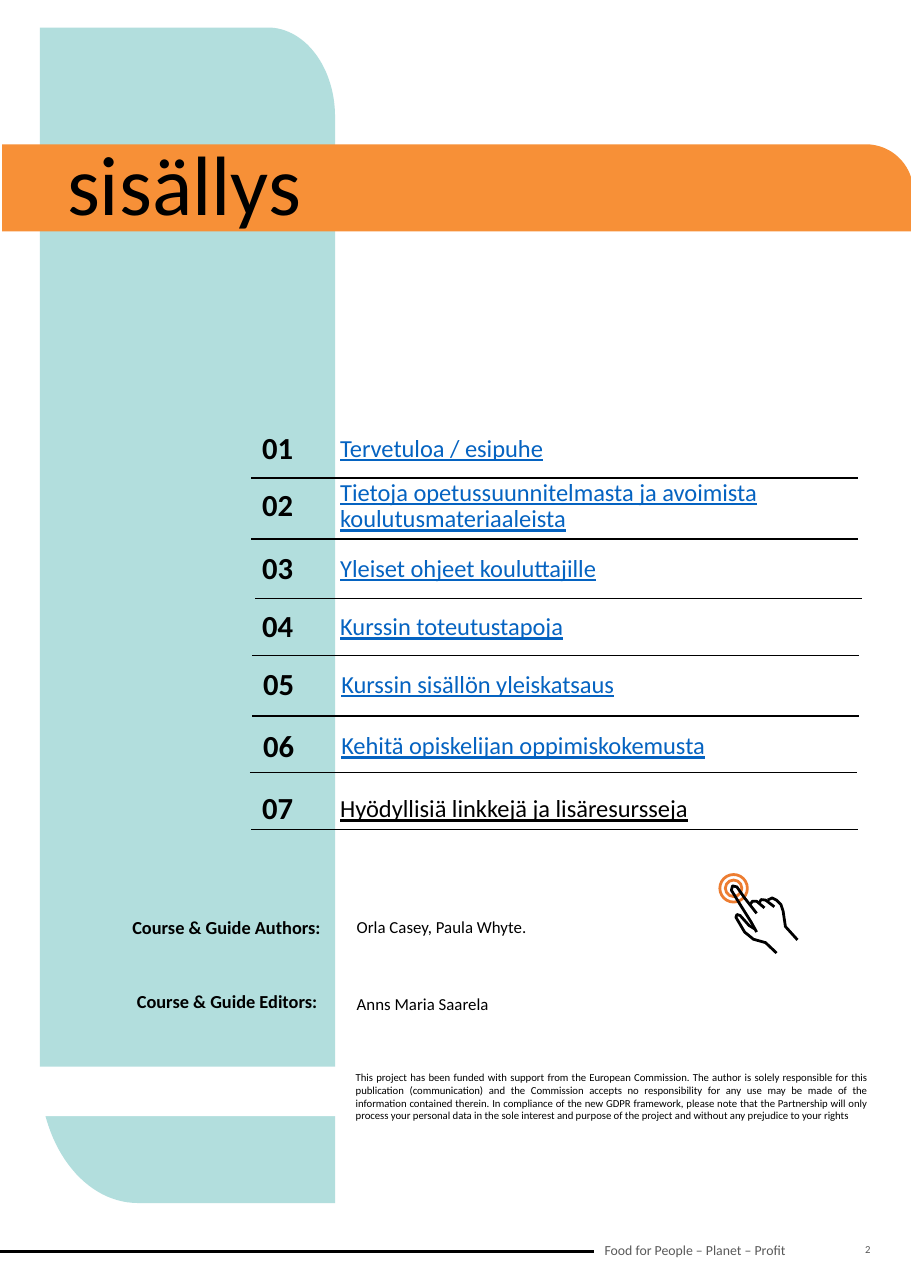
"""Build the contents page of a Finnish course guide."""
import dataclasses
import math
import typing

import lxml.etree
import pptx
import pptx.dml.color
import pptx.enum.shapes
import pptx.enum.text
import pptx.oxml.ns
import pptx.shapes.base
import pptx.slide
import pptx.util

Pt = pptx.util.Pt
RGBColor = pptx.dml.color.RGBColor
ALIGN = pptx.enum.text.PP_ALIGN
ANCHOR = pptx.enum.text.MSO_ANCHOR
SHAPE = pptx.enum.shapes.MSO_SHAPE

BLACK = RGBColor(0x00, 0x00, 0x00)
WHITE = RGBColor(0xFF, 0xFF, 0xFF)
GREY = RGBColor(0x59, 0x59, 0x59)
TEAL = RGBColor(0xB2, 0xDE, 0xDD)
ORANGE = RGBColor(0xF7, 0x90, 0x37)
RING_ORANGE = RGBColor(0xED, 0x7D, 0x31)
LINK_BLUE = RGBColor(0x05, 0x63, 0xC1)

Point = tuple[float, float]
Box = tuple[float, float, float, float]
Format = dict[str, typing.Any]

CONTENTS_SPACING: Format = {"line_spacing": 0.9, "space_before": Pt(8.3)}
DISCLAIMER = (
    "This project has been funded with support from the European Commission. "
    "The author is solely responsible for this publication (communication) and the "
    "Commission accepts no responsibility for any use may be made of the information "
    "contained therein. In compliance of the new GDPR framework, please note that the "
    "Partnership will only process your personal data in the sole interest and purpose "
    "of the project and without any prejudice to your rights"
)


@dataclasses.dataclass(frozen=True)
class Label:
    """A line of text with its box and formats."""

    text: str
    box: Box
    size: float
    color: RGBColor = BLACK
    anchor: ANCHOR = ANCHOR.TOP
    font: Format = dataclasses.field(default_factory=dict)
    paragraph: Format = dataclasses.field(default_factory=dict)


@dataclasses.dataclass(frozen=True)
class Chapter:
    """A contents entry with the rule below it."""

    title: str
    left: float
    top: float
    rule_left: float
    rule_top: float
    width: float = 335.5
    color: RGBColor = LINK_BLUE


CHAPTERS = [
    Chapter("Tervetuloa / esipuhe", 164.2, 280.1, 164.2, 312.5),
    Chapter("Tietoja opetussuunnitelmasta ja avoimista koulutusmateriaaleista",
            164.2, 317.5, 164.2, 352.1, width=386),
    Chapter("Yleiset ohjeet kouluttajille", 164.2, 358.6, 167, 391),
    Chapter("Kurssin toteutustapoja", 164.2, 396.7, 164.9, 428.4),
    Chapter("Kurssin sisällön yleiskatsaus", 164.9, 434.2, 164.9, 468),
    Chapter("Kehitä opiskelijan oppimiskokemusta", 164.9, 474.5, 163.4, 504.7),
    Chapter("Hyödyllisiä linkkejä ja lisäresursseja", 164.2, 515.5, 164.2, 542.2, color=BLACK),
]

LABELS = [
    Label("sisällys", (36.7, 90, 536.4, 84.2), 55, paragraph=CONTENTS_SPACING),
    Label("Course & Guide Authors:", (77.8, 595.4, 139, 21.6), 12,
          font={"bold": True}, paragraph={"alignment": ALIGN.RIGHT}),
    Label("Orla Casey, Paula Whyte.", (226.1, 595.4, 216, 20.9), 11),
    Label("Course & Guide Editors:", (75.6, 643.7, 139, 21.6), 12,
          font={"bold": True}, paragraph={"alignment": ALIGN.RIGHT}),
    Label("Anns Maria Saarela", (226.1, 645.8, 216, 20.9), 11),
    Label(DISCLAIMER, (225.4, 696.2, 348.5, 41), 7, paragraph={"alignment": ALIGN.JUSTIFY}),
    Label("Food for People – Planet – Profit", (388.1, 802.8, 134.6, 28.8), 9, GREY, ANCHOR.MIDDLE),
    Label("2", (542.9, 797.8, 33.1, 36.7), 7, GREY, ANCHOR.MIDDLE,
          paragraph={"alignment": ALIGN.RIGHT}),
]

HAND_STROKES: list[list[Point]] = [
    [(494.6, 609.1), (491, 602.6), (483.8, 591.1), (478.1, 581.8), (478.8, 578.9),
     (481.7, 579.6), (486.7, 586.8), (494.6, 596.9)],
    [(493.2, 607), (489.6, 604.8), (483.8, 598.3), (481.7, 597.6), (481, 599.4),
     (486.7, 609.1), (492.5, 613.8), (500.4, 616), (507.6, 622.8)],
    [(490.3, 591.1), (491.8, 589), (494.6, 589), (499.7, 593.3)],
    [(496.1, 590.4), (497.5, 587.9), (500.4, 588.2), (506.2, 592.6)],
    [(501.8, 588.2), (504.7, 586.8), (507.6, 588.2), (510.5, 591.1),
     (511.9, 595.4), (513.4, 605.5), (521.3, 614.2)],
]


def apply(target: typing.Any, values: Format) -> None:
    """Set each format value on the target."""
    for attribute, value in values.items():
        setattr(target, attribute, value)


def paint(shape: typing.Any, fill: RGBColor | None, stroke: RGBColor | None = None,
          weight: float = 1) -> None:
    """Give a shape its fill and outline, without a shadow."""
    shape.shadow.inherit = False
    if fill is None:
        shape.fill.background()
    else:
        shape.fill.solid()
        shape.fill.fore_color.rgb = fill
    if stroke is None:
        shape.line.fill.background()
    else:
        shape.line.color.rgb = stroke
        shape.line.width = Pt(weight)


def draw_label(slide: pptx.slide.Slide, label: Label) -> None:
    """Add a wrapped text box for a label."""
    frame = slide.shapes.add_textbox(*map(Pt, label.box)).text_frame
    apply(frame, {"word_wrap": True, "vertical_anchor": label.anchor})
    paragraph = frame.paragraphs[0]
    apply(paragraph, label.paragraph)
    run = paragraph.add_run()
    run.text = label.text
    apply(run.font, {"name": "Calibri", "size": Pt(label.size), **label.font})
    run.font.color.rgb = label.color


def draw_rule(slide: pptx.slide.Slide, left: float, top: float, width: float, weight: float) -> None:
    """Add a horizontal black line."""
    rule = slide.shapes.add_connector(
        pptx.enum.shapes.MSO_CONNECTOR.STRAIGHT, Pt(left), Pt(top), Pt(left + width), Pt(top))
    rule.line.color.rgb = BLACK
    rule.line.width = Pt(weight)
    lxml.etree.SubElement(rule.element.spPr, pptx.oxml.ns.qn("a:effectLst"))


def draw_outline(slide: pptx.slide.Slide, points: list[Point], close: bool) -> pptx.shapes.base.BaseShape:
    """Add a freeform through the points."""
    corners = [(Pt(x), Pt(y)) for x, y in points]
    builder = slide.shapes.build_freeform(*corners[0])
    builder.add_line_segments(corners[1:], close=close)
    return builder.convert_to_shape()


def rounded_corner(center: Point, radii: Point, start: int) -> list[Point]:
    """Return a clockwise quarter of an ellipse from the start angle."""
    angles = [math.radians(start + step) for step in range(0, 91, 3)]
    return [(center[0] + radii[0] * math.cos(angle), center[1] + radii[1] * math.sin(angle))
            for angle in angles]


def draw_background(slide: pptx.slide.Slide) -> None:
    """Draw the teal column, the white gap and the orange title band."""
    column = [(26, 18), *rounded_corner((175, 76.3), (44, 58.3), 270),
              (219, 786.2), *rounded_corner((90, 700.5), (64, 85.7), 90)]
    paint(draw_outline(slide, column, True), TEAL)
    gap = slide.shapes.add_shape(SHAPE.RECTANGLE, *map(Pt, (16.6, 697, 205.9, 32.4)))
    paint(gap, WHITE)
    band = [(1.4, 151.2), (1.4, 94.3), *rounded_corner((566, 125.3), (31, 31), 270), (597, 151.2)]
    paint(draw_outline(slide, band, True), ORANGE)


def draw_chapter(slide: pptx.slide.Slide, number: int, chapter: Chapter) -> None:
    """Draw a numbered contents entry and its rule."""
    draw_rule(slide, chapter.rule_left, chapter.rule_top, 396.7, 1)
    draw_label(slide, Label(f"{number:02}", (chapter.left, chapter.top, 51.1, 27.4), 20,
                            BLACK, ANCHOR.MIDDLE, {"bold": True}, CONTENTS_SPACING))
    draw_label(slide, Label(chapter.title, (chapter.left + 51.1, chapter.top, chapter.width, 27.4), 16,
                            chapter.color, ANCHOR.MIDDLE, {"underline": True}, CONTENTS_SPACING))


def draw_tapping_hand(slide: pptx.slide.Slide) -> None:
    """Draw the pointing hand with two rings around its fingertip."""
    for radius in (9, 5.4):
        ring = slide.shapes.add_shape(
            SHAPE.OVAL, Pt(479.5 - radius), Pt(580.5 - radius), Pt(2 * radius), Pt(2 * radius))
        paint(ring, None, RING_ORANGE, 1.8)
    for stroke in HAND_STROKES:
        paint(draw_outline(slide, stroke, False), None, BLACK, 1.8)


def main() -> None:
    """Build and save the contents page."""
    guide = pptx.Presentation()
    apply(guide, {"slide_width": Pt(595.44), "slide_height": Pt(841.68)})
    slide = guide.slides.add_slide(guide.slide_layouts[6])
    draw_background(slide)
    draw_rule(slide, 0, 817.9, 388.1, 1.5)
    for number, chapter in enumerate(CHAPTERS, start=1):
        draw_chapter(slide, number, chapter)
    for label in LABELS:
        draw_label(slide, label)
    draw_tapping_hand(slide)
    guide.save("out.pptx")


if __name__ == "__main__":
    main()
